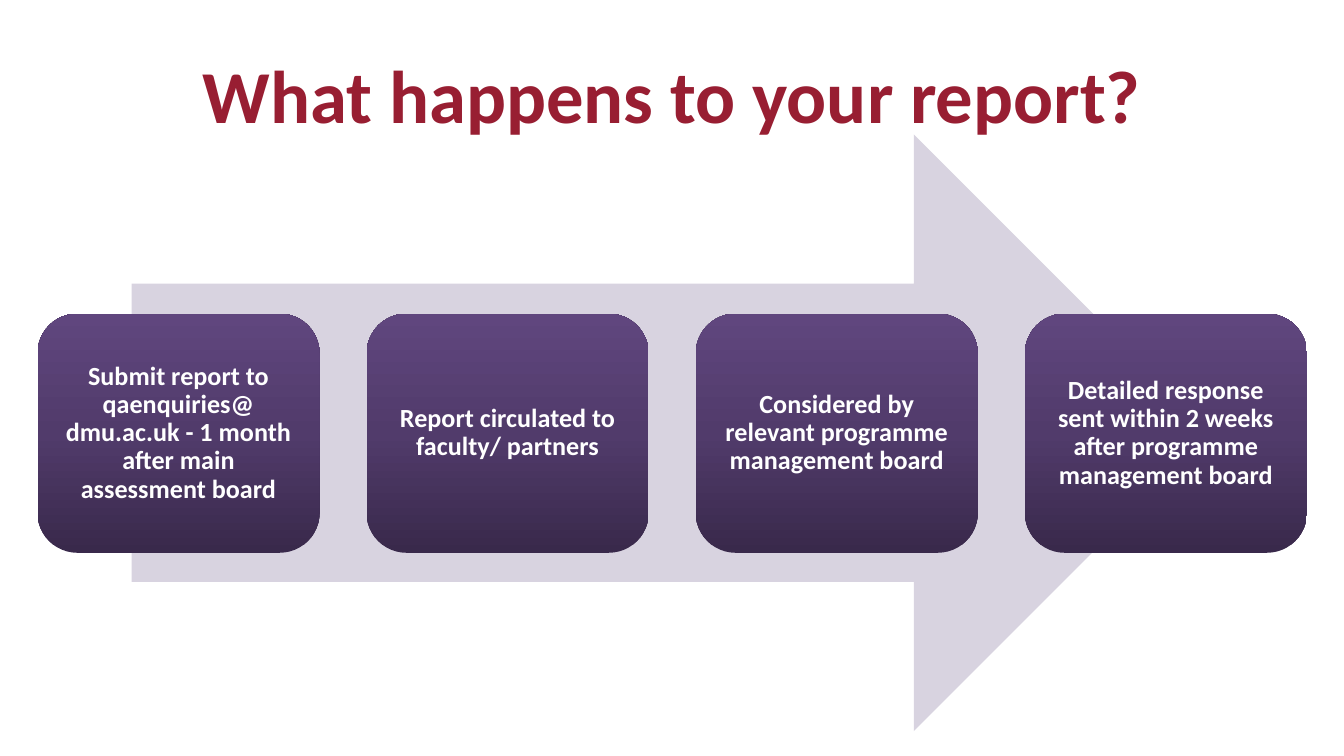
from copy import deepcopy

from pptx import Presentation
from pptx.dml.color import RGBColor
from pptx.enum.shapes import MSO_SHAPE
from pptx.enum.text import MSO_ANCHOR, PP_ALIGN
from pptx.oxml.ns import qn
from pptx.util import Cm, Pt

ARROW = MSO_SHAPE.RIGHT_ARROW
ROUNDED = MSO_SHAPE.ROUNDED_RECTANGLE
MIDDLE = MSO_ANCHOR.MIDDLE
CENTER = PP_ALIGN.CENTER

# Content
TITLE = "What happens to your report?"
STEPS = [
    "Submit report to qaenquiries@ dmu.ac.uk - 1 month after main assessment board",
    "Report circulated to faculty/ partners",
    "Considered by relevant programme management board",
    "Detailed response sent within 2 weeks after programme management board",
]
GRADIENT = [(0, "39294B"), (0.5, "513B6B"), (1, "60467E")]

# Layout in centimetres
STEP_LEFT, STEP_TOP = 0.71, 5.93
STEP_WIDTH, STEP_HEIGHT = 5.33, 4.52
STEP_PITCH = 6.22


def color(code):
    return RGBColor.from_string(code)


def write(shape, text, size, code, inset):
    frame = shape.text_frame
    frame.word_wrap = True
    frame.vertical_anchor = MIDDLE
    frame.margin_left = frame.margin_right = Cm(inset)
    frame.margin_top = frame.margin_bottom = Cm(inset)
    para = frame.paragraphs[0]
    para.text = text
    para.alignment = CENTER
    para.font.name = "Calibri"
    para.font.size = Pt(size)
    para.font.bold = True
    para.font.color.rgb = color(code)
    return para


def add_plain_shape(slide, kind, left, top, width, height):
    shape = slide.shapes.add_shape(kind, Cm(left), Cm(top), Cm(width), Cm(height))
    shape.shadow.inherit = False
    shape.line.fill.background()
    return shape


def fill_gradient(shape):
    shape.fill.gradient()
    shape.fill.gradient_angle = 90
    # The default gradient has two stops; add a third
    stop_list = shape._element.spPr.find(".//" + qn("a:gsLst"))
    stop_list.append(deepcopy(stop_list[0]))
    for stop, (position, code) in zip(shape.fill.gradient_stops, GRADIENT):
        stop.position = position
        stop.color.rgb = color(code)


deck = Presentation()
deck.slide_width, deck.slide_height = Cm(25.4), Cm(14.29)
slide = deck.slides.add_slide(deck.slide_layouts[6])

# Title
title = slide.shapes.add_textbox(Cm(1.27), Cm(0.58), Cm(22.86), Cm(2.39))
write(title, TITLE, 40, "981E32", 0.2)

# Background arrow
arrow = add_plain_shape(slide, ARROW, 2.49, 2.54, 20.42, 11.28)
arrow.fill.solid()
arrow.fill.fore_color.rgb = color("D8D3E0")

# Process steps
for index, text in enumerate(STEPS):
    box = add_plain_shape(slide, ROUNDED, STEP_LEFT + index * STEP_PITCH,
                          STEP_TOP, STEP_WIDTH, STEP_HEIGHT)
    fill_gradient(box)
    para = write(box, text, 14, "FFFFFF", 0.16)
    para.line_spacing = 0.9

deck.save("out.pptx")
